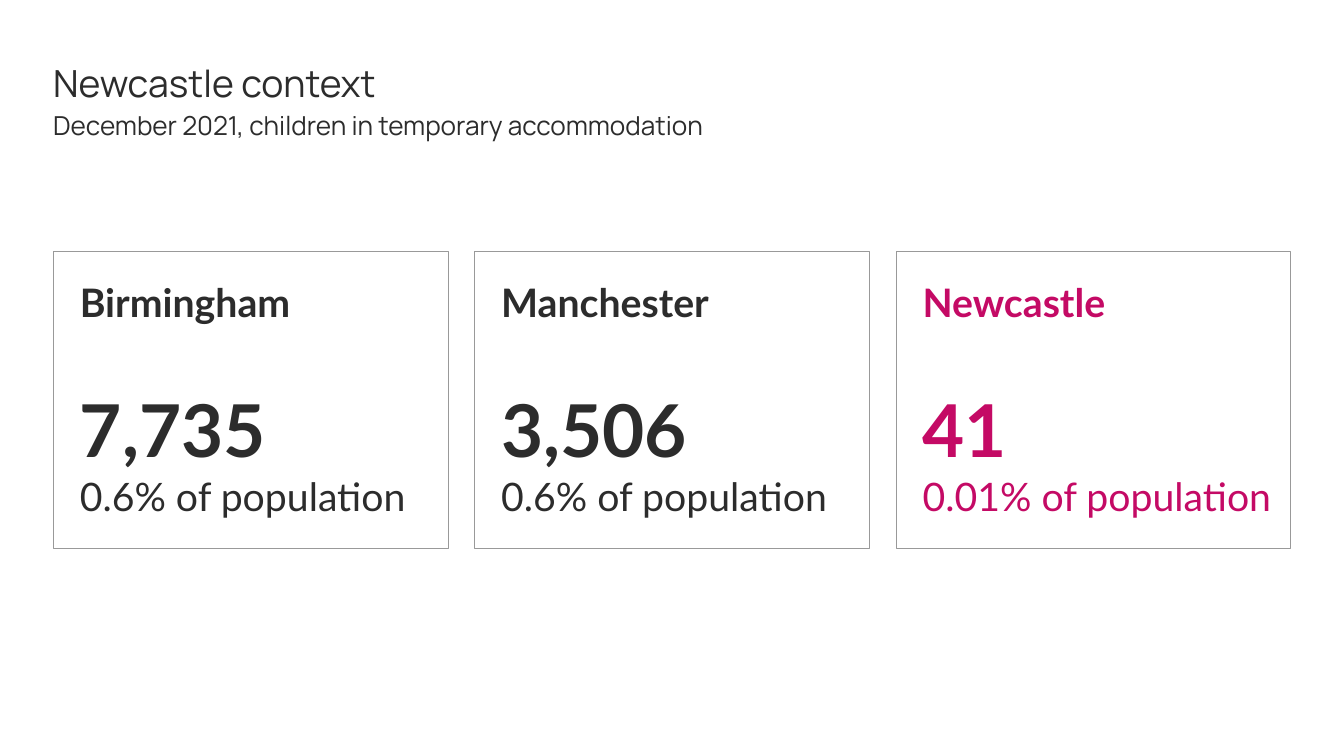
"""Build a slide comparing children in temporary accommodation in three cities."""
from pptx import Presentation
from pptx.dml.color import RGBColor
from pptx.enum.shapes import MSO_SHAPE as Shape
from pptx.enum.text import MSO_ANCHOR as Anchor, PP_ALIGN as Align
from pptx.util import Pt

PX = 9525
INK = RGBColor(0x2C, 0x2C, 0x2C)
PINK = RGBColor(0xC4, 0x0A, 0x65)
GREY = RGBColor(0x99, 0x99, 0x99)
WHITE = RGBColor(0xFF, 0xFF, 0xFF)


def write(para, text, size, font="Lato", color=INK, bold=False, space=1, before=0):
    para.alignment = Align.LEFT
    para.line_spacing = space
    para.space_before = Pt(before)
    run = para.add_run()
    run.text = text
    run.font.name = font
    run.font.size = Pt(size)
    run.font.bold = bold
    run.font.color.rgb = color


def frame(shape, left, top, right, bottom):
    body = shape.text_frame
    body.word_wrap = True
    body.vertical_anchor = Anchor.TOP
    body.margin_left, body.margin_top = left * PX, top * PX
    body.margin_right, body.margin_bottom = right * PX, bottom * PX
    return body


deck = Presentation()
deck.slide_width = 1920 * PX
deck.slide_height = 1080 * PX
slide = deck.slides.add_slide(deck.slide_layouts[6])
slide.background.fill.solid()
slide.background.fill.fore_color.rgb = WHITE

title = slide.shapes.add_textbox(76 * PX, 76 * PX, 1769 * PX, 120 * PX)
body = frame(title, 0, 0, 0, 0)
write(body.paragraphs[0], "Newcastle context", 40, font="Manrope", space=1.15)
write(body.add_paragraph(), "December 2021, children in temporary accommodation", 28,
      font="Manrope", space=1.15)

cards = [
    ("Birmingham", "7,735", "0.6% of population", INK, 38),
    ("Manchester", "3,506", "0.6% of population", INK, 38),
    ("Newcastle", "41", "0.01% of population", PINK, 19),
]
for i, (city, count, share, color, right) in enumerate(cards):
    card = slide.shapes.add_shape(
        Shape.RECTANGLE, (76 + 602 * i) * PX, 359 * PX, 564 * PX, 425 * PX)
    card.shadow.inherit = False
    card.fill.background()
    card.line.color.rgb = GREY
    card.line.width = Pt(0.75)
    body = frame(card, 38, 38, right, 38)
    write(body.paragraphs[0], city, 42, color=color, bold=True)
    write(body.add_paragraph(), count, 78, color=color, bold=True, space=1.15, before=50)
    write(body.add_paragraph(), share, 42, color=color)

deck.save("out.pptx")
